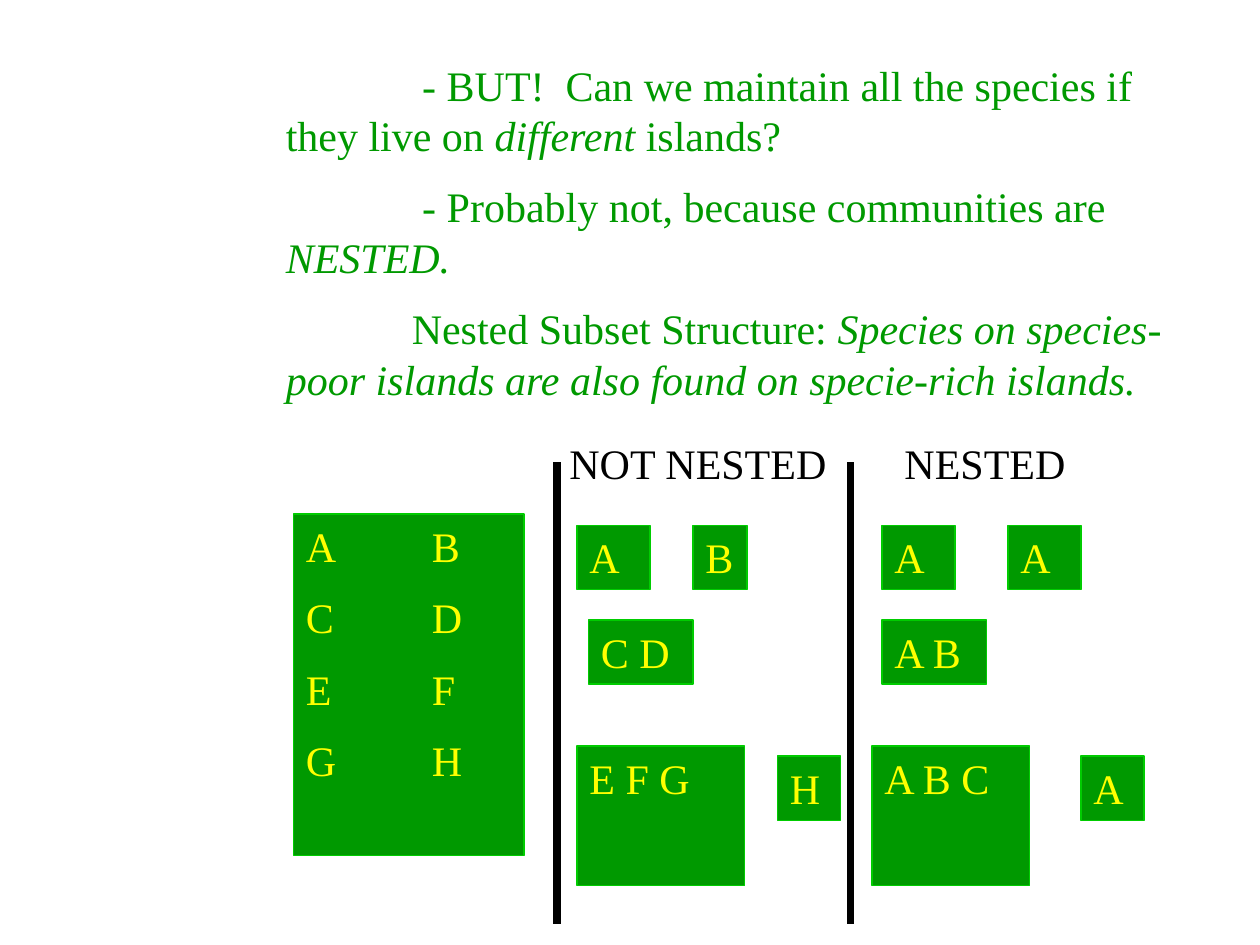
from typing import NamedTuple

from lxml import etree
from pptx import Presentation, util as u
from pptx.dml.color import RGBColor
from pptx.enum import shapes, text
from pptx.oxml.ns import qn

GREEN, EDGE, YELLOW, BLACK = "009900", "00CC00", "FFFF00", "000000"


class Box(NamedTuple):
    """Position, size and lines of text of an island or label, in inches."""
    left: float
    top: float
    width: float
    height: float
    lines: tuple[str, ...]


ISLANDS = [
    Box(2.33, 4.08, 1.83, 2.71, ("A\tB", "C\tD", "E\tF", "G\tH")),
    Box(4.58, 4.17, 0.58, 0.51, ("A",)),
    Box(5.5, 4.17, 0.43, 0.51, ("B",)),
    Box(4.67, 4.92, 0.83, 0.51, ("C D",)),
    Box(4.58, 5.92, 1.33, 1.11, ("E F G",)),
    Box(6.17, 6, 0.5, 0.51, ("H",)),
    Box(7, 4.17, 0.58, 0.51, ("A",)),
    Box(8, 4.17, 0.58, 0.51, ("A",)),
    Box(7, 4.92, 0.83, 0.51, ("A B",)),
    Box(6.92, 5.92, 1.25, 1.11, ("A B C",)),
    Box(8.58, 6, 0.5, 0.51, ("A",)),
]
HEADINGS = [
    Box(4.42, 3.42, 2.25, 0.5, ("NOT NESTED",)),
    Box(7.08, 3.42, 2.25, 0.5, ("NESTED",)),
]
ARGUMENT = Box(2.17, 0.42, 7.33, 3.53, (
    "\t - BUT!  Can we maintain all the species if \tthey live on |different| islands?",
    "\t - Probably not, because communities are \t|NESTED.",
    "\tNested Subset Structure: "
    "|Species on species-poor islands are also found on specie-rich islands.",
))
DIVIDERS = (4.42, 6.75)


def rgb(value: str) -> RGBColor:
    """Turn a hex string into a colour."""
    return RGBColor.from_string(value)


def place(box: Box) -> list[u.Length]:
    """Give the position and size of a box as lengths."""
    return [u.Inches(value) for value in box[:4]]


def set_tabs(paragraph) -> None:
    """Put a tab stop at every inch across the paragraph."""
    stops = etree.SubElement(paragraph._p.get_or_add_pPr(), qn("a:tabLst"))
    for inch in range(1, 8):
        etree.SubElement(stops, qn("a:tab"), pos=str(u.Inches(inch)), algn="l")


def write(shape, lines: tuple[str, ...], color: str) -> None:
    """Write one paragraph per line, with every second part between bars in italics."""
    frame = shape.text_frame
    frame.word_wrap = True
    frame.vertical_anchor = text.MSO_ANCHOR.TOP
    frame.text = "\n".join(line.split("|")[0] for line in lines)
    for paragraph, line in zip(frame.paragraphs, lines):
        paragraph.alignment = text.PP_ALIGN.LEFT
        paragraph.space_before = u.Pt(12)
        if "\t" in line:
            set_tabs(paragraph)
        for part in line.split("|")[1:]:
            paragraph.add_run().text = part
        for index, run in enumerate(paragraph.runs):
            run.font.name = "Times New Roman"
            run.font.size = u.Pt(24)
            run.font.italic = index % 2 == 1
            run.font.color.rgb = rgb(color)


def add_label(slide, box: Box, color: str) -> None:
    """Add a text box."""
    write(slide.shapes.add_textbox(*place(box)), box.lines, color)


def add_island(slide, box: Box) -> None:
    """Add a green island that lists its species."""
    island = slide.shapes.add_shape(shapes.MSO_SHAPE.RECTANGLE, *place(box))
    island.shadow.inherit = False
    island.fill.solid()
    island.fill.fore_color.rgb = rgb(GREEN)
    island.line.color.rgb = rgb(EDGE)
    island.line.width = u.Pt(0.75)
    write(island, box.lines, YELLOW)


def add_divider(slide, left: float) -> None:
    """Add a thick vertical line between two columns."""
    divider = slide.shapes.add_connector(
        shapes.MSO_CONNECTOR.STRAIGHT,
        u.Inches(left), u.Inches(3.67), u.Inches(left), u.Inches(7.33))
    divider.line.color.rgb = rgb(BLACK)
    divider.line.width = u.Pt(4.5)
    etree.SubElement(divider.element.spPr, qn("a:effectLst"))


def main() -> None:
    """Build the slide on nested communities."""
    deck = Presentation()
    deck.slide_width, deck.slide_height = u.Inches(10), u.Inches(7.5)
    slide = deck.slides.add_slide(deck.slide_layouts[6])
    add_label(slide, ARGUMENT, GREEN)
    for island in ISLANDS:
        add_island(slide, island)
    for left in DIVIDERS:
        add_divider(slide, left)
    for heading in HEADINGS:
        add_label(slide, heading, BLACK)
    deck.save("out.pptx")


if __name__ == "__main__":
    main()
